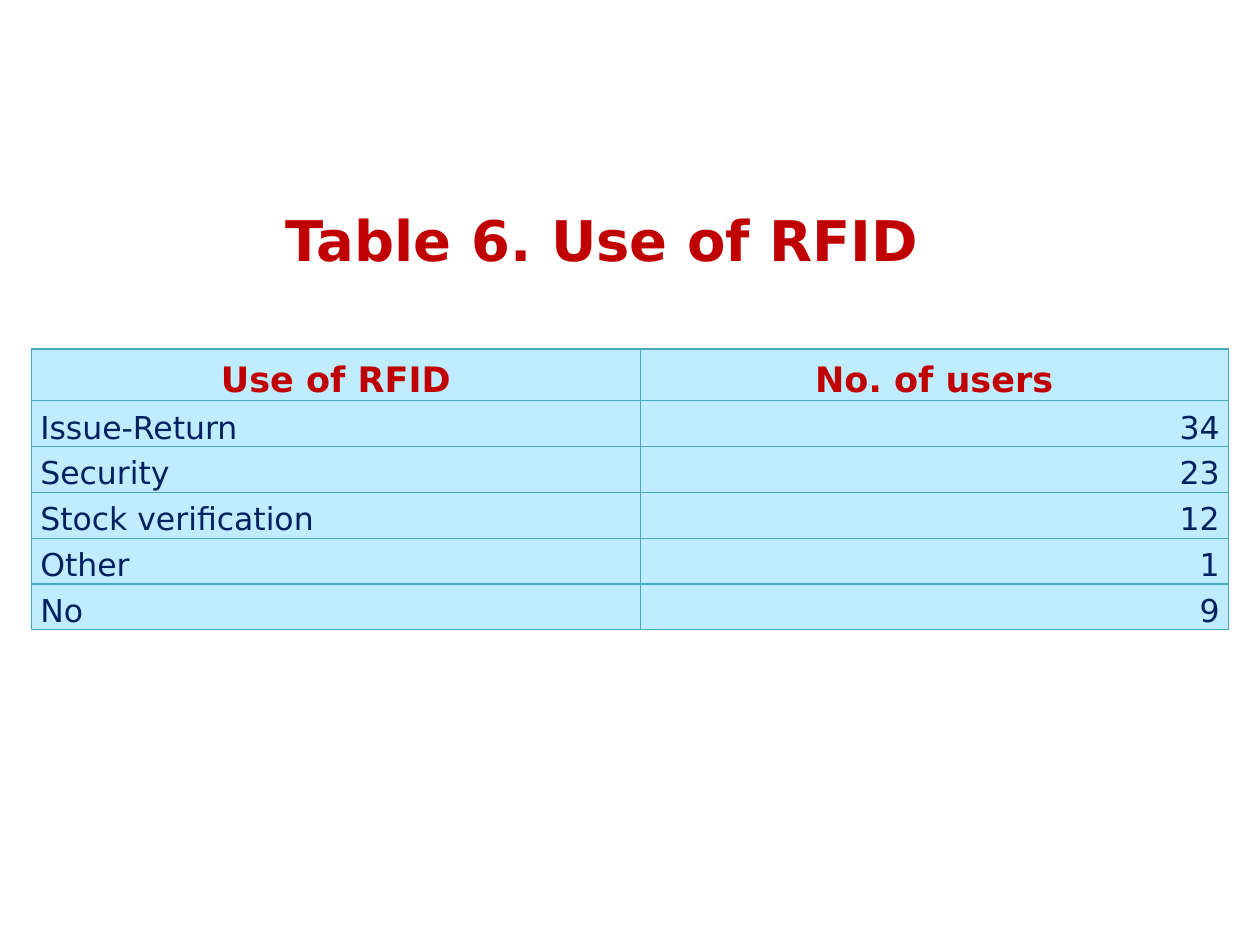
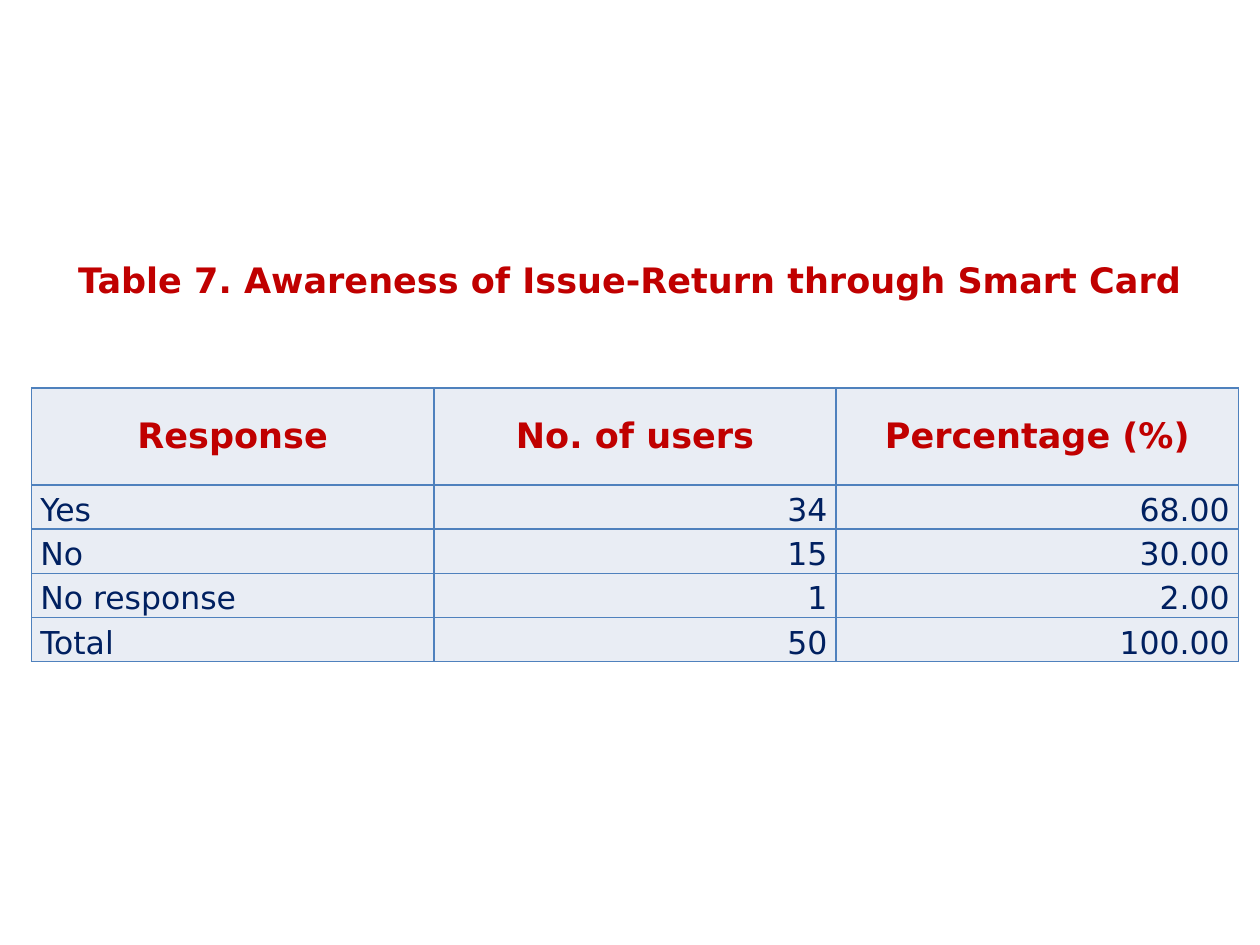
from lxml.etree import SubElement
from pptx import Presentation
from pptx.dml.color import RGBColor
from pptx.enum.text import MSO_ANCHOR as Anchor, MSO_AUTO_SIZE as AutoSize, PP_ALIGN as Align
from pptx.oxml.ns import qn
from pptx.util import Inches, Pt

FONT = "DejaVu Sans"
RED = RGBColor(0xC0, 0x00, 0x00)
NAVY = RGBColor(0x00, 0x20, 0x60)
SKY = RGBColor(0xBF, 0xEC, 0xFF)
TEAL = RGBColor(0x46, 0xAA, 0xC5)
MIST = RGBColor(0xE9, 0xED, 0xF4)
BLUE = RGBColor(0x4F, 0x81, 0xBD)

RFID_USES = [
    ("Use of RFID", "No. of users"),
    ("Issue-Return", "34"),
    ("Security", "23"),
    ("Stock verification", "12"),
    ("Other", "1"),
    ("No", "9"),
]
CARD_AWARENESS = [
    ("Response", "No. of users", "Percentage (%)"),
    ("Yes", "34", "68.00"),
    ("No", "15", "30.00"),
    ("No response", "1", "2.00"),
    ("Total", "50", "100.00"),
]


def write_text(frame, text, size=18, color=NAVY, bold=False, align=Align.LEFT):
    paragraph = frame.paragraphs[0]
    paragraph.alignment = align
    run = paragraph.add_run()
    run.text = text
    run.font.name = FONT
    run.font.size = Pt(size)
    run.font.bold = bold
    run.font.color.rgb = color


def add_title(slide, box, text, size, wrap=True, align=Align.LEFT, anchor=Anchor.TOP):
    frame = slide.shapes.add_textbox(*map(Inches, box)).text_frame
    frame.word_wrap = wrap
    frame.auto_size = AutoSize.SHAPE_TO_FIT_TEXT
    frame.vertical_anchor = anchor
    write_text(frame, text, size=size, color=RED, bold=True, align=align)


def style_cell(cell, fill, line_color, line_width, anchor):
    cell.margin_left = cell.margin_right = Inches(0.07)
    cell.margin_top = cell.margin_bottom = 0
    cell.vertical_anchor = anchor
    properties = cell._tc.get_or_add_tcPr()
    for side in ("a:lnL", "a:lnR", "a:lnT", "a:lnB"):
        line = SubElement(properties, qn(side), w=str(Pt(line_width)))
        solid = SubElement(line, qn("a:solidFill"))
        SubElement(solid, qn("a:srgbClr"), val=str(line_color))
    cell.fill.solid()
    cell.fill.fore_color.rgb = fill


def add_data_table(slide, box, rows, column_widths, header_height, fill,
                   line_color, line_width, header_anchor=Anchor.BOTTOM):
    """Fill the box with a header row and equally high body rows."""
    table = slide.shapes.add_table(len(rows), len(rows[0]), *map(Inches, box)).table
    body_height = (box[3] - header_height) / (len(rows) - 1)
    for column, width in zip(table.columns, column_widths):
        column.width = Inches(width)
    for row_index, values in enumerate(rows):
        is_header = row_index == 0
        table.rows[row_index].height = Inches(header_height if is_header else body_height)
        for column_index, value in enumerate(values):
            cell = table.cell(row_index, column_index)
            style_cell(cell, fill, line_color, line_width,
                       header_anchor if is_header else Anchor.BOTTOM)
            if is_header:
                write_text(cell.text_frame, value, size=20, color=RED,
                           bold=True, align=Align.CENTER)
            else:
                write_text(cell.text_frame, value,
                           align=Align.RIGHT if column_index else Align.LEFT)


def build_rfid_slide(slide):
    add_data_table(slide, (0.25, 2.77, 9.5, 2.23), RFID_USES, (4.83, 4.67),
                   header_height=0.41, fill=SKY, line_color=TEAL, line_width=0.75)
    add_title(slide, (2.17, 1.58, 5.36, 0.64), "Table 6. Use of RFID", 32, wrap=False)


def build_smart_card_slide(slide):
    width = 9.58
    add_data_table(slide, (0.25, 3.08, width, 2.17), CARD_AWARENESS, [width / 3] * 3,
                   header_height=0.77, fill=MIST, line_color=BLUE, line_width=1,
                   header_anchor=Anchor.MIDDLE)
    add_title(slide, (0.25, 2, 9.5, 0.44),
              "Table 7. Awareness of Issue-Return through Smart Card", 20,
              align=Align.CENTER, anchor=Anchor.MIDDLE)


def main():
    presentation = Presentation()
    presentation.slide_width = Inches(10)
    presentation.slide_height = Inches(7.5)
    blank = presentation.slide_layouts[6]
    for build in (build_rfid_slide, build_smart_card_slide):
        build(presentation.slides.add_slide(blank))
    presentation.save("out.pptx")


if __name__ == "__main__":
    main()
